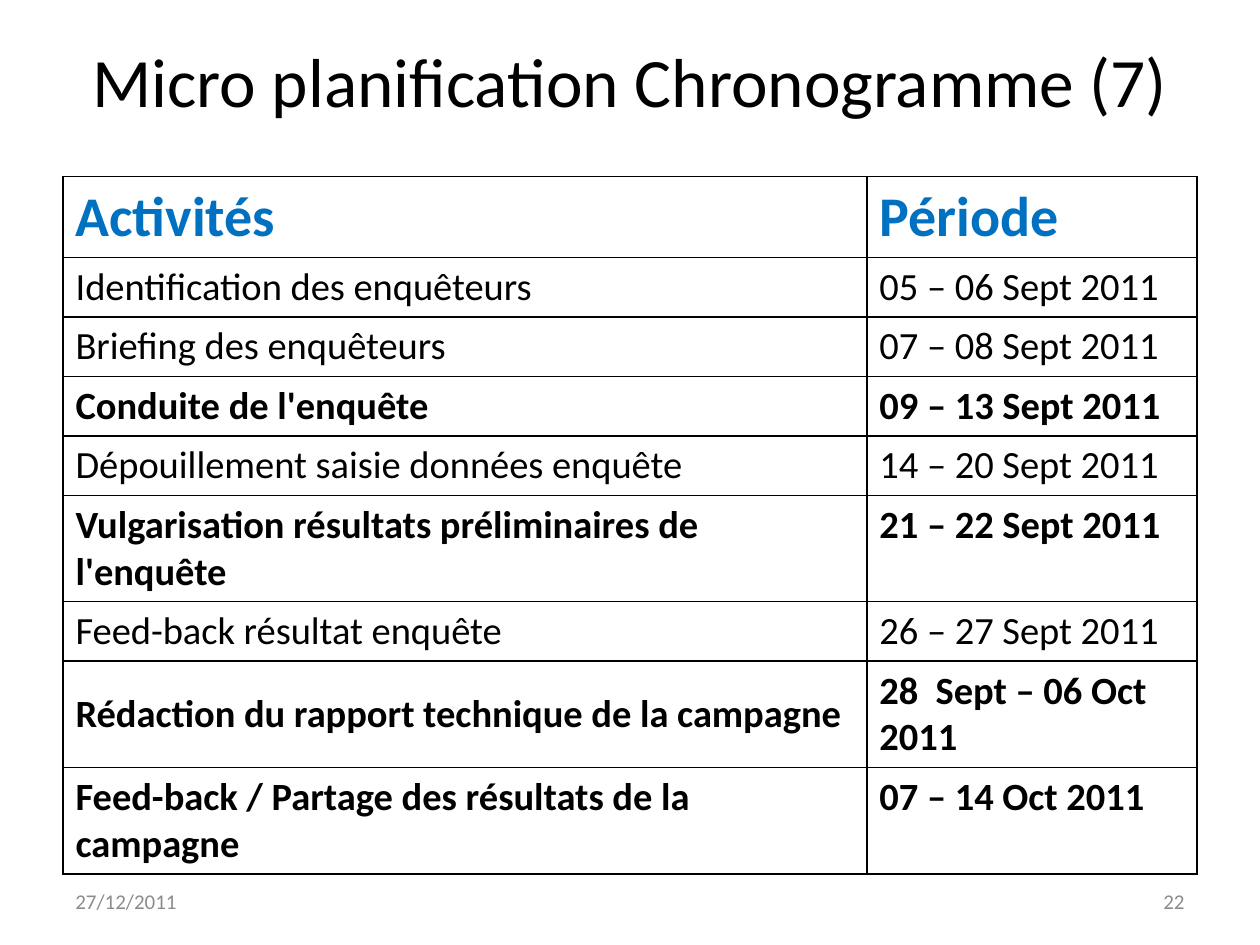
from lxml import etree
from pptx import Presentation
from pptx.dml.color import RGBColor
from pptx.enum import text
from pptx.oxml import ns
from pptx.util import Inches, Pt

BLACK = RGBColor(0x00, 0x00, 0x00)
WHITE = RGBColor(0xFF, 0xFF, 0xFF)
BLUE = RGBColor(0x00, 0x70, 0xC0)
GRAY = RGBColor(0x8C, 0x8C, 0x8C)
FONT = "Calibri"

# Activity, period, bold
SCHEDULE = [
    ("Activités", "Période", True),
    ("Identification des enquêteurs", "05 – 06 Sept 2011", False),
    ("Briefing des enquêteurs", "07 – 08 Sept 2011", False),
    ("Conduite de l'enquête", "09 – 13 Sept 2011", True),
    ("Dépouillement saisie données enquête", "14 – 20 Sept 2011", False),
    ("Vulgarisation résultats préliminaires de l'enquête", "21 – 22 Sept 2011", True),
    ("Feed-back résultat enquête", "26 – 27 Sept 2011", False),
    ("Rédaction du rapport technique de la campagne", "28  Sept – 06 Oct 2011", True),
    ("Feed-back / Partage des résultats de la campagne", "07 – 14 Oct 2011", True),
]


def format_paragraph(paragraph, size, color, bold=False):
    font = paragraph.font
    font.name = FONT
    font.size = Pt(size)
    font.bold = bold
    font.color.rgb = color


def add_borders(cell):
    """Draw a 1 pt black line on all four sides; call before filling the cell."""
    properties = cell._tc.get_or_add_tcPr()
    for side in ("lnL", "lnR", "lnT", "lnB"):
        line = etree.SubElement(properties, ns.qn(f"a:{side}"), w=str(Pt(1)))
        fill = etree.SubElement(line, ns.qn("a:solidFill"))
        etree.SubElement(fill, ns.qn("a:srgbClr"), val=str(BLACK))


presentation = Presentation()
presentation.slide_width = Inches(10)
presentation.slide_height = Inches(7.5)
slide = presentation.slides.add_slide(presentation.slide_layouts[5])

title = slide.shapes.title
title.left, title.top = Inches(0.5), Inches(0.16)
title.width, title.height = Inches(9), Inches(0.95)
title.text_frame.text = "Micro planification Chronogramme (7)"
title.text_frame.vertical_anchor = text.MSO_ANCHOR.MIDDLE
title.text_frame.paragraphs[0].alignment = text.PP_ALIGN.CENTER
format_paragraph(title.text_frame.paragraphs[0], 39.6, BLACK)

row_height = Inches(0.41)
table = slide.shapes.add_table(
    len(SCHEDULE), 2, Inches(0.5), Inches(1.4), Inches(9), row_height * len(SCHEDULE)
).table
table.horz_banding = False
table.columns[0].width = Inches(6.38)
table.columns[1].width = Inches(2.62)

for row, (activity, period, bold) in enumerate(SCHEDULE):
    table.rows[row].height = row_height
    size, color = (32, BLUE) if row == 0 else (22, BLACK)
    for column, content in enumerate((activity, period)):
        cell = table.cell(row, column)
        cell.text = content
        if row > 0 and column == 0:
            cell.vertical_anchor = text.MSO_ANCHOR.MIDDLE
        add_borders(cell)
        cell.fill.solid()
        cell.fill.fore_color.rgb = WHITE
        format_paragraph(cell.text_frame.paragraphs[0], size, color, bold)

for content, left, alignment in (
    ("27/12/2011", 0.5, text.PP_ALIGN.LEFT),
    ("22", 7.17, text.PP_ALIGN.RIGHT),
):
    footer = slide.shapes.add_textbox(Inches(left), Inches(6.95), Inches(2.33), Inches(0.4))
    frame = footer.text_frame
    frame.word_wrap = True
    frame.vertical_anchor = text.MSO_ANCHOR.MIDDLE
    frame.text = content
    frame.paragraphs[0].alignment = alignment
    format_paragraph(frame.paragraphs[0], 12, GRAY)

presentation.save("out.pptx")
